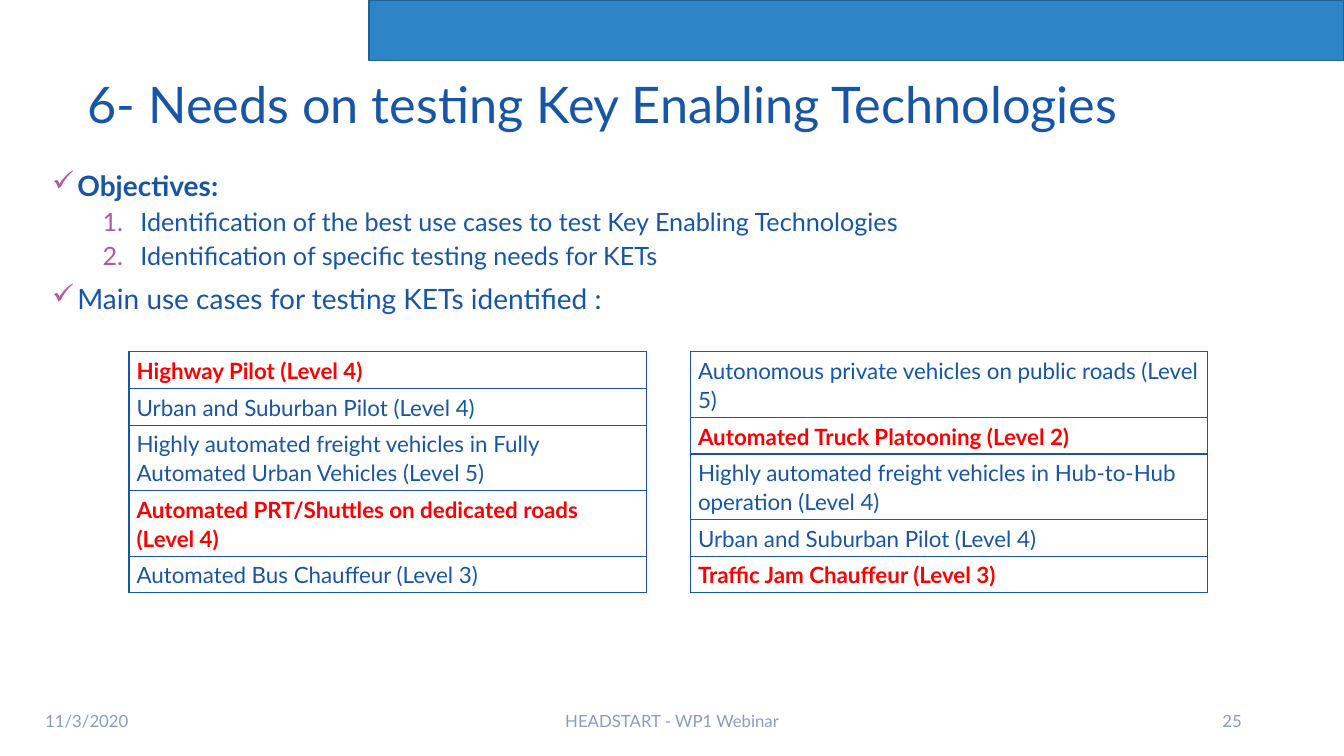
"""Build the slide on needs for testing Key Enabling Technologies."""
from lxml.etree import SubElement
from pptx import Presentation
from pptx.dml.color import RGBColor
from pptx.enum.shapes import MSO_SHAPE as Shape
from pptx.enum.text import MSO_ANCHOR as Anchor, PP_ALIGN as Align
from pptx.oxml.ns import qn
from pptx.util import Pt

BLUE = RGBColor(0x17, 0x55, 0xA6)
RED = RGBColor(0xFF, 0x00, 0x00)
PINK = RGBColor(0xBA, 0x55, 0xA0)
WHITE = RGBColor(0xFF, 0xFF, 0xFF)
FOOTER_GREY = RGBColor(0x8C, 0x99, 0xC1)
BAND_FILL = RGBColor(0x2C, 0x85, 0xC6)
BAND_LINE = RGBColor(0x21, 0x62, 0x92)


def add_span(para, text, size, color, bold=False):
    span = para.add_run()
    span.text = text
    span.font.name = "Lato"
    span.font.size = Pt(size)
    span.font.bold = bold
    span.font.color.rgb = color


def add_solid_color(parent, color):
    SubElement(parent, qn("a:srgbClr"), val=str(color))


deck = Presentation()
deck.slide_width, deck.slide_height = Pt(960), Pt(540)
page = deck.slides.add_slide(deck.slide_layouts[5])

band = page.shapes.add_shape(Shape.RECTANGLE, Pt(263.5), Pt(0), Pt(696.5), Pt(43.2))
band.shadow.inherit = False
band.fill.solid()
band.fill.fore_color.rgb = BAND_FILL
band.line.color.rgb = BAND_LINE
band.line.width = Pt(1)

title = page.shapes.title
title.left, title.top, title.width, title.height = Pt(55.4), Pt(53.3), Pt(838.8), Pt(53.3)
title.text_frame.vertical_anchor = Anchor.TOP
title.text_frame.word_wrap = True
para = title.text_frame.paragraphs[0]
para.alignment = Align.LEFT
para.line_spacing = 0.9
add_span(para, "6- Needs on testing Key Enabling Technologies", 36, BLUE)

objectives = [
    (0, "Objectives:", True),
    (1, "Identification of the best use cases to test Key Enabling Technologies", False),
    (1, "Identification of specific testing needs for KETs", False),
    (0, "Main use cases for testing KETs identified :", False),
]
level_styles = [(20, 10, 18, -18), (18, 5, 63, -27)]
body = page.shapes.add_textbox(Pt(30.2), Pt(119.5), Pt(889.2), Pt(119.5)).text_frame
body.word_wrap = True
for index, (level, text, bold) in enumerate(objectives):
    size, space, margin, indent = level_styles[level]
    para = body.add_paragraph() if index else body.paragraphs[0]
    para.level = level
    para.line_spacing = 0.9
    para.space_before = Pt(space if index else 0)
    props = para._p.get_or_add_pPr()
    props.set("marL", str(Pt(margin)))
    props.set("indent", str(Pt(indent)))
    add_solid_color(SubElement(props, qn("a:buClr")), PINK)
    if level:
        SubElement(props, qn("a:buFont"), typeface="Lato")
        SubElement(props, qn("a:buAutoNum"), type="arabicPeriod")
    else:
        SubElement(props, qn("a:buChar"), char="✓")
    add_span(para, text, size, BLUE, bold)

use_cases = [
    (92.2, [
        ("Highway Pilot (Level 4)", 1, True),
        ("Urban and Suburban Pilot (Level 4)", 1, False),
        ("Highly automated freight vehicles in Fully Automated Urban Vehicles (Level 5)", 2, False),
        ("Automated PRT/Shuttles on dedicated roads (Level 4)", 2, True),
        ("Automated Bus Chauffeur (Level 3)", 1, False),
    ]),
    (493.2, [
        ("Autonomous private vehicles on public roads (Level 5)", 2, False),
        ("Automated Truck Platooning (Level 2)", 1, True),
        ("Highly automated freight vehicles in Hub-to-Hub operation (Level 4)", 2, False),
        ("Urban and Suburban Pilot (Level 4)", 1, False),
        ("Traffic Jam Chauffeur (Level 3)", 1, True),
    ]),
]
for left, cases in use_cases:
    table = page.shapes.add_table(len(cases), 1, Pt(left), Pt(251.3), Pt(369.4), Pt(172)).table
    table.first_row = table.horz_banding = False
    for row, (text, lines, highlighted) in enumerate(cases):
        table.rows[row].height = Pt(5.6 + 20.6 * lines)
        cell = table.cell(row, 0)
        cell.margin_left = cell.margin_right = Pt(5.4)
        cell.margin_top = cell.margin_bottom = Pt(2.8)
        for side in ("lnL", "lnR", "lnT", "lnB"):
            border = SubElement(cell._tc.get_or_add_tcPr(), qn(f"a:{side}"), w=str(Pt(1)))
            add_solid_color(SubElement(border, qn("a:solidFill")), BLUE)
        cell.fill.solid()
        cell.fill.fore_color.rgb = WHITE
        para = cell.text_frame.paragraphs[0]
        para.line_spacing = 1.07
        add_span(para, text, 16, RED if highlighted else BLUE, highlighted)

footers = [
    (25.2, 216, Align.LEFT, "11/3/2020"),
    (318.2, 324, Align.CENTER, "HEADSTART - WP1 Webinar"),
    (678.2, 216, Align.RIGHT, "25"),
]
for left, width, alignment, text in footers:
    footer = page.shapes.add_textbox(Pt(left), Pt(500.4), Pt(width), Pt(28.8)).text_frame
    footer.word_wrap = True
    footer.vertical_anchor = Anchor.MIDDLE
    footer.paragraphs[0].alignment = alignment
    add_span(footer.paragraphs[0], text, 12, FOOTER_GREY)

deck.save("out.pptx")
